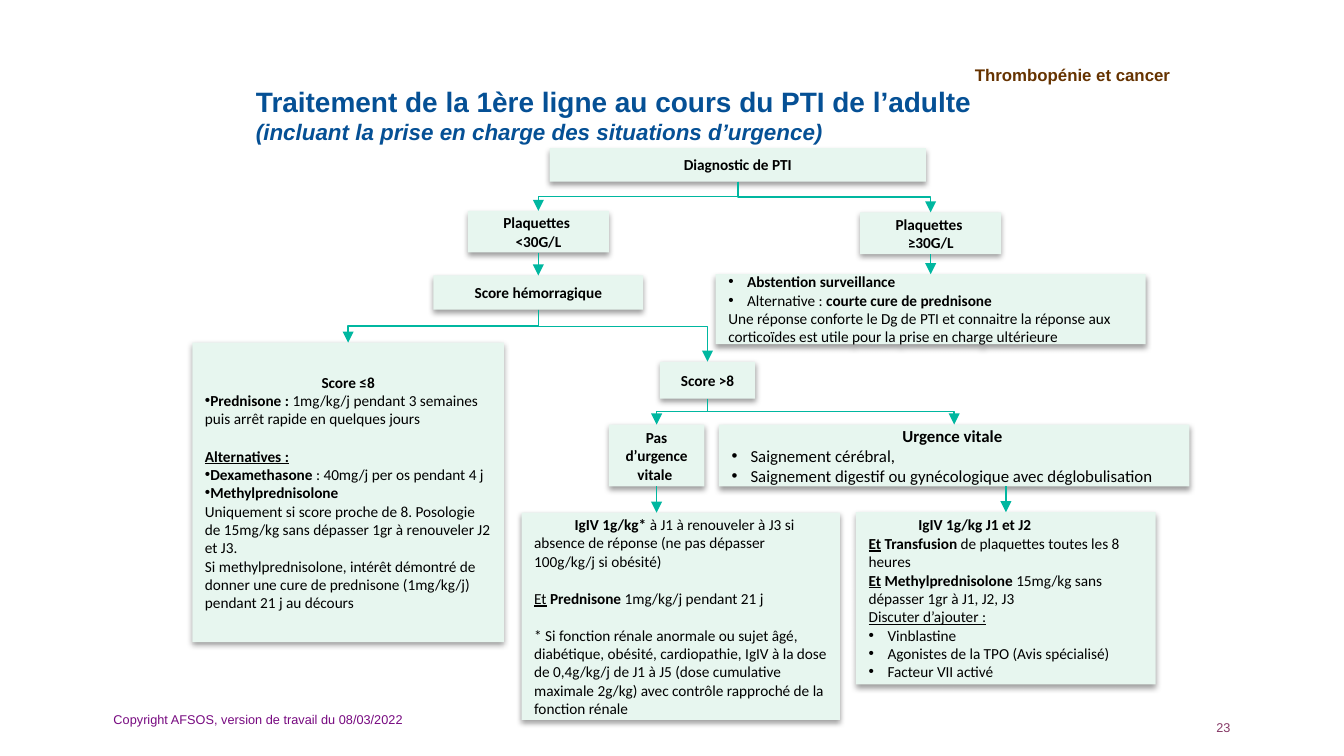
"""Build the first-line ITP treatment decision tree slide."""
from dataclasses import dataclass
from typing import Optional

from lxml.etree import SubElement
from pptx import Presentation
from pptx.dml.color import RGBColor
from pptx.enum.shapes import MSO_CONNECTOR as Link, MSO_SHAPE
from pptx.enum.text import MSO_ANCHOR as Anchor, MSO_AUTO_SIZE, PP_ALIGN as Align
from pptx.oxml.ns import qn
from pptx.util import Pt

BOX_FILL, ARROW_COLOR, BLACK = "E7F6EF", "00B7A0", "000000"
HANG = 10.1


@dataclass
class Run:
    text: str
    bold: bool = False
    underline: bool = False


@dataclass
class Para:
    runs: list
    align: Align = Align.LEFT
    bullet: bool = False
    margin: float = 0
    indent: float = 0
    gap: float = 0


@dataclass
class Step:
    left: float
    top: float
    width: float
    height: float
    paras: list
    size: float = 8.2


@dataclass
class Branch:
    start: str
    end: str
    bend: float = 0.5


@dataclass
class Label:
    left: float
    top: float
    width: float
    height: float
    text: str
    size: float
    color: str
    align: Align = Align.LEFT
    anchor: Anchor = Anchor.MIDDLE
    bold: bool = False


def rgb(color: str) -> RGBColor:
    return RGBColor.from_string(color)


def heading(*lines: str) -> list:
    return [Para([Run(line, True)], Align.CENTER) for line in lines]


def line(*runs: Run, **layout) -> Para:
    return Para(list(runs), **layout)


def item(*runs: Run) -> Para:
    return Para(list(runs), bullet=True, margin=HANG, indent=-HANG)


def prepare(frame, anchor: Anchor) -> None:
    frame.word_wrap = True
    frame.auto_size = MSO_AUTO_SIZE.NONE
    frame.vertical_anchor = anchor
    frame.margin_left = frame.margin_right = Pt(6.8)
    frame.margin_top = frame.margin_bottom = Pt(3.4)


def style(font, name: str, size: float, color: str) -> None:
    font.name, font.size = name, Pt(size)
    font.color.rgb = rgb(color)


def write(frame, paras: list, size: float) -> None:
    for number, para in enumerate(paras):
        paragraph = frame.add_paragraph() if number else frame.paragraphs[0]
        paragraph.alignment = para.align
        if para.gap:
            paragraph.space_before = Pt(para.gap)
        props = paragraph._p.get_or_add_pPr()
        props.set("marL", str(Pt(para.margin)))
        props.set("indent", str(Pt(para.indent)))
        if para.bullet:
            SubElement(props, qn("a:buFont"), typeface="Arial")
            SubElement(props, qn("a:buChar"), char="•")
        style(paragraph.font, "Calibri", size, BLACK)
        same_weight = len({run.bold for run in para.runs}) == 1
        if same_weight:
            paragraph.font.bold = para.runs[0].bold
        for part in para.runs:
            run = paragraph.add_run()
            run.text = part.text
            if not same_weight:
                run.font.bold = part.bold
            if part.underline:
                run.font.underline = True


def add_step(slide, step: Step):
    box = slide.shapes.add_shape(MSO_SHAPE.RECTANGLE, Pt(step.left), Pt(step.top),
                                 Pt(step.width), Pt(step.height))
    box.fill.solid()
    box.fill.fore_color.rgb = rgb(BOX_FILL)
    box.line.fill.background()
    box.shadow.inherit = False
    effects = box._element.spPr.find(qn("a:effectLst"))
    shadow = SubElement(effects, qn("a:outerShdw"), blurRad=str(Pt(3.1)), dist=str(Pt(1.6)),
                        dir="5400000", algn="t", rotWithShape="0")
    SubElement(SubElement(shadow, qn("a:srgbClr"), val=BLACK), qn("a:alpha"), val="38000")
    prepare(box.text_frame, Anchor.MIDDLE)
    write(box.text_frame, step.paras, step.size)
    return box


def add_arrow(slide, kind: Link, start: tuple, end: tuple, source=None, target=None):
    arrow = slide.shapes.add_connector(kind, *start, *end)
    if source is not None:
        arrow.begin_connect(source, 2)
    if target is not None:
        arrow.end_connect(target, 0)
    arrow.line.color.rgb = rgb(ARROW_COLOR)
    arrow.line.width = Pt(0.75)
    SubElement(arrow.line._get_or_add_ln(), qn("a:tailEnd"), type="triangle")
    SubElement(arrow._element.spPr, qn("a:effectLst"))
    return arrow


def add_drop(slide, source, target, x: Optional[int] = None) -> None:
    """Join two stacked boxes, gluing each end that meets the middle of a side."""
    middles = [box.left + box.width // 2 for box in (source, target)]
    x = middles[0] if x is None else x
    glued = [box if abs(middle - x) < Pt(0.5) else None
             for box, middle in zip((source, target), middles)]
    add_arrow(slide, Link.STRAIGHT, (x, source.top + source.height), (x, target.top), *glued)


def add_branch(slide, source, target, bend: float) -> None:
    """Draw an elbow that leaves downwards, as a turned three-part connector."""
    x1, y1 = source.left + source.width // 2, source.top + source.height
    x2, y2 = target.left + target.width // 2, target.top
    arrow = add_arrow(slide, Link.ELBOW, (x1, y1), (x2, y2), source, target)
    span, drop = abs(x2 - x1), y2 - y1
    arrow.left, arrow.top = (x1 + x2 - drop) // 2, (y1 + y2 - span) // 2
    arrow.width, arrow.height = drop, span
    frame = arrow._element.spPr.find(qn("a:xfrm"))
    rightward = x2 > x1
    frame.set("rot", "16200000" if rightward else "5400000")
    frame.set("flipH", "1" if rightward else "0")
    frame.set("flipV", "0")
    guides = arrow._element.spPr.find(qn("a:prstGeom")).find(qn("a:avLst"))
    SubElement(guides, qn("a:gd"), name="adj1", fmla=f"val {round(bend * 100000)}")


def add_label(slide, label: Label) -> None:
    box = slide.shapes.add_textbox(Pt(label.left), Pt(label.top), Pt(label.width), Pt(label.height))
    prepare(box.text_frame, label.anchor)
    paragraph = box.text_frame.paragraphs[0]
    paragraph.text, paragraph.alignment = label.text, label.align
    style(paragraph.font, "Arial", label.size, label.color)
    paragraph.font.bold = label.bold


def add_title(slide) -> None:
    title = slide.shapes.title
    title.left, title.top, title.width, title.height = Pt(130.3), Pt(45.4), Pt(459.4), Pt(49.7)
    prepare(title.text_frame, Anchor.TOP)
    title.text_frame.margin_top = 0
    paragraph = title.text_frame.paragraphs[0]
    paragraph.alignment = Align.LEFT
    style(paragraph.font, "Arial", 15, "055095")
    paragraph.font.bold = True
    paragraph.add_run().text = "Traitement de la 1ère ligne au cours du PTI de l’adulte"
    paragraph.add_line_break()
    subtitle = paragraph.add_run()
    subtitle.text = "(incluant la prise en charge des situations d’urgence)"
    subtitle.font.size, subtitle.font.italic = Pt(12), True


STEPS = {
    "diagnosis": Step(294.5, 79.3, 201.6, 18, heading("Diagnostic de PTI")),
    "low": Step(250.6, 113, 75.6, 22.3, heading("Plaquettes ", "<30G/L")),
    "high": Step(460.8, 113.8, 75.6, 22.3, heading("Plaquettes ", "≥30G/L")),
    "watch": Step(383.4, 146.9, 230.4, 37.6, [
        item(Run("Abstention surveillance", True)),
        item(Run("Alternative : "), Run("courte cure de prednisone", True)),
        line(Run("Une réponse conforte le Dg de PTI et connaitre la réponse aux corticoïdes "
                 "est utile pour la prise en charge ultérieure"))]),
    "bleeding": Step(232.2, 147.6, 112.4, 18.3, heading("Score hémorragique")),
    "mild": Step(103, 183.6, 167, 160.5, heading("Score ≤8") + [
        line(Run("Prednisone :", True),
             Run(" 1mg/kg/j pendant 3 semaines puis arrêt rapide en quelques jours"), bullet=True),
        line(Run("Alternatives :", True, True), gap=10),
        line(Run("Dexamethasone ", True), Run(": 40mg/j per os pendant 4 j"), bullet=True),
        line(Run("Methylprednisolone", True), bullet=True),
        line(Run("Uniquement si score proche de 8. Posologie de 15mg/kg sans dépasser 1gr "
                 "à renouveler J2 et J3.")),
        line(Run("Si methylprednisolone, intérêt démontré de donner une cure de prednisone "
                 "(1mg/kg/j) pendant 21 j au décours"))]),
    "severe": Step(353.5, 193.8, 51.1, 19.8, heading("Score >8")),
    "stable": Step(326.2, 227.5, 51.1, 33.1, heading("Pas d’urgence vitale ")),
    "emergency": Step(385.2, 227.5, 252, 33.1, heading("Urgence vitale ") + [
        item(Run("Saignement cérébral,")),
        item(Run("Saignement digestif ou gynécologique avec déglobulisation"))], 9),
    "stable_care": Step(279.4, 274.7, 170.6, 111, [
        line(Run("IgIV 1g/kg* ", True), Run("à J1 à renouveler à J3 si absence de réponse "
             "(ne pas dépasser 100g/kg/j si obésité)"), indent=21.6),
        line(Run("Et", underline=True), Run(" "), Run("Prednisone", True),
             Run(" 1mg/kg/j pendant 21 j"), gap=10),
        line(Run("* Si fonction rénale anormale ou sujet âgé, diabétique, obésité, cardiopathie, "
                 "IgIV à la dose de 0,4g/kg/j de J1 à J5 (dose cumulative maximale 2g/kg) "
                 "avec contrôle rapproché de la fonction rénale"), gap=10)]),
    "emergency_care": Step(458.6, 274.4, 160.6, 92.3, [
        line(Run("IgIV 1g/kg J1 et J2", True), indent=26.6),
        line(Run("Et", True, True), Run(" Transfusion ", True),
             Run("de plaquettes toutes les 8 heures")),
        line(Run("Et", True, True), Run(" Methylprednisolone ", True),
             Run("15mg/kg sans dépasser 1gr à J1, J2, J3")),
        line(Run("Discuter d’ajouter :", underline=True)),
        *[item(Run(drug)) for drug in ("Vinblastine", "Agonistes de la TPO (Avis spécialisé)",
                                       "Facteur VII activé")]]),
}
BRANCHES = [
    Branch("diagnosis", "low"), Branch("diagnosis", "high"),
    Branch("bleeding", "mild"), Branch("bleeding", "severe", 0.33),
    Branch("severe", "stable"), Branch("severe", "emergency"),
]
LABELS = [
    Label(422.6, 23.8, 211, 32.4, "Thrombopénie et cancer", 9, "663300", Align.RIGHT, bold=True),
    Label(516.2, 382.3, 149.8, 13.7, "23", 6.8, "863966", Align.RIGHT, Anchor.TOP),
    Label(54, 374.4, 243.4, 21.6, "Copyright AFSOS, version de travail du 08/03/2022", 6.8, "770980"),
]


def main() -> None:
    deck = Presentation()
    deck.slide_width, deck.slide_height = Pt(720), Pt(405)
    slide = deck.slides.add_slide(deck.slide_layouts[5])
    add_title(slide)
    boxes = {key: add_step(slide, step) for key, step in STEPS.items()}
    for branch in BRANCHES:
        add_branch(slide, boxes[branch.start], boxes[branch.end], branch.bend)
    for start, end in (("low", "bleeding"), ("high", "watch"), ("stable", "stable_care")):
        add_drop(slide, boxes[start], boxes[end])
    care = boxes["emergency_care"]
    add_drop(slide, boxes["emergency"], care, care.left + care.width // 2)
    for label in LABELS:
        add_label(slide, label)
    deck.save("out.pptx")


if __name__ == "__main__":
    main()
